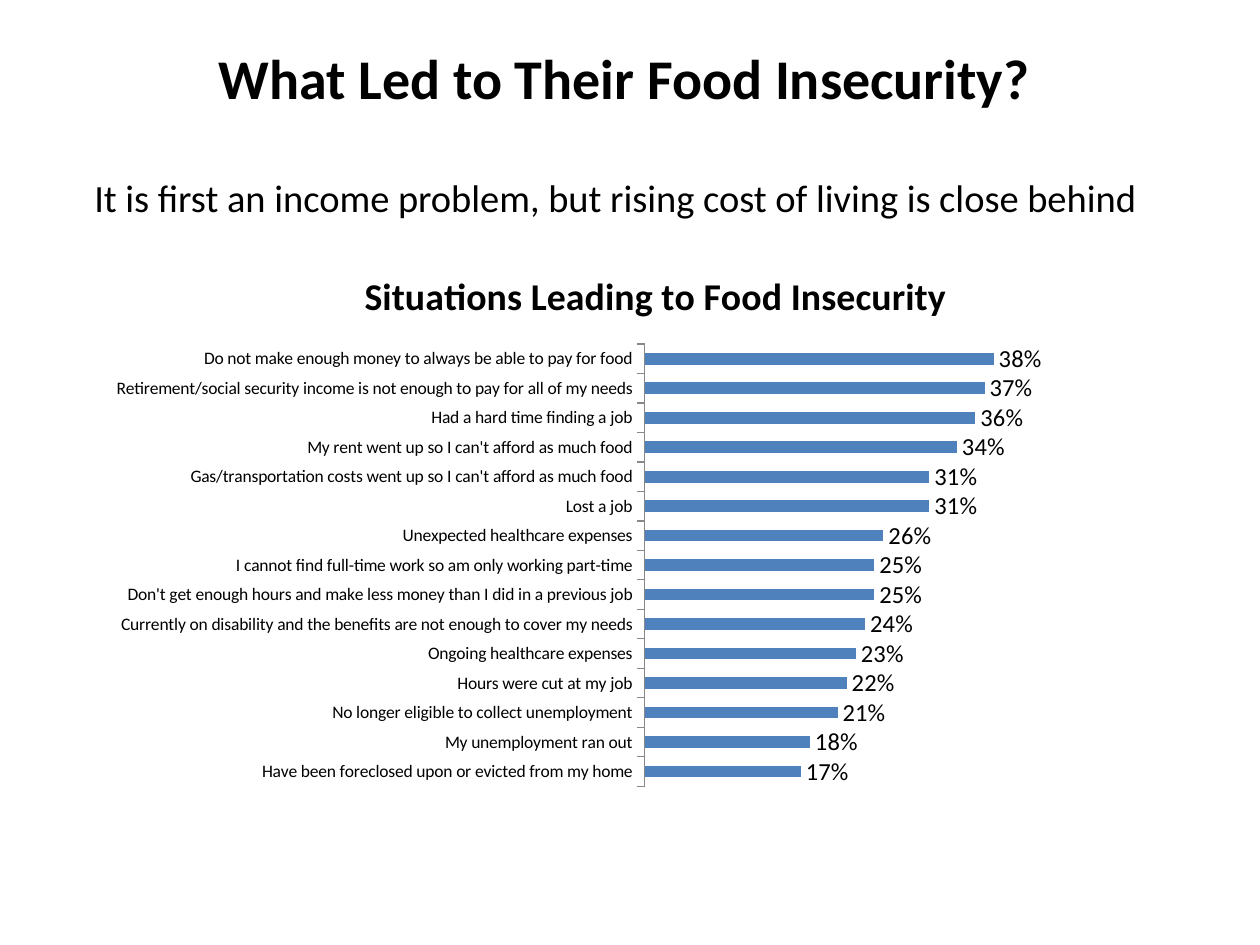
from lxml import etree
from pptx import Presentation
from pptx.chart.data import CategoryChartData
from pptx.dml.color import RGBColor
from pptx.enum import chart as ch, text
from pptx.oxml.ns import qn
from pptx.util import Pt

BLACK = RGBColor(0, 0, 0)
GRAY = RGBColor(0x88, 0x88, 0x88)
BLUE = RGBColor(0x4F, 0x81, 0xBD)

SITUATIONS = [
    ("Do not make enough money to always be able to pay for food", 0.38),
    ("Retirement/social security income is not enough to pay for all of my needs", 0.37),
    ("Had a hard time finding a job", 0.36),
    ("My rent went up so I can't afford as much food", 0.34),
    ("Gas/transportation costs went up so I can't afford as much food", 0.31),
    ("Lost a job", 0.31),
    ("Unexpected healthcare expenses", 0.26),
    ("I cannot find full-time work so am only working part-time", 0.25),
    ("Don't get enough hours and make less money than I did in a previous job", 0.25),
    ("Currently on disability and the benefits are not enough to cover my needs", 0.24),
    ("Ongoing healthcare expenses", 0.23),
    ("Hours were cut at my job", 0.22),
    ("No longer eligible to collect unemployment", 0.21),
    ("My unemployment ran out", 0.18),
    ("Have been foreclosed upon or evicted from my home", 0.17),
]


def set_font(font, size, bold=False):
    values = {"name": "Calibri", "size": Pt(size), "bold": bold}
    for key, value in values.items():
        setattr(font, key, value)
    font.color.rgb = BLACK


def set_text(tf, content, size, bold, anchor):
    values = {"text": content, "word_wrap": True, "vertical_anchor": anchor,
              "auto_size": text.MSO_AUTO_SIZE.NONE}
    for key, value in values.items():
        setattr(tf, key, value)
    p = tf.paragraphs[0]
    p.alignment = text.PP_ALIGN.CENTER
    set_font(p.runs[0].font, size, bold)


prs = Presentation()
prs.slide_width, prs.slide_height = Pt(720), Pt(540)
s = prs.slides.add_slide(prs.slide_layouts[5])

title = s.shapes.title
title_box = {"left": 24, "top": 18, "width": 666, "height": 52}
for key, value in title_box.items():
    setattr(title, key, Pt(value))
set_text(title.text_frame, "What Led to Their Food Insecurity?", 32, True,
         text.MSO_ANCHOR.MIDDLE)

data = CategoryChartData(number_format="0%")
data.categories = [label for label, share in SITUATIONS]
data.add_series("Series 1", [share for label, share in SITUATIONS])
chart = s.shapes.add_chart(ch.XL_CHART_TYPE.BAR_CLUSTERED, Pt(53.3), Pt(139.7),
                           Pt(643), Pt(316), data).chart
set_font(chart.font, 18)
chart.has_legend = False
chart.has_title = True
chart.chart_title.include_in_layout = False
tf = chart.chart_title.text_frame
tf.text = "Situations Leading to Food Insecurity"
set_font(tf.paragraphs[0].runs[0].font, 21.6, True)

cat_axis = chart.category_axis
cat_axis.reverse_order = True
cat_axis.major_tick_mark = ch.XL_TICK_MARK.OUTSIDE
cat_axis.format.line.color.rgb = GRAY
cat_axis.format.line.width = Pt(0.75)
set_font(cat_axis.tick_labels.font, 10)

val_axis = chart.value_axis
val_values = {"minimum_scale": 0, "maximum_scale": 0.6, "visible": False,
              "has_major_gridlines": False}
for key, value in val_values.items():
    setattr(val_axis, key, value)

plot = chart.plots[0]
plot.gap_width = 150
plot.vary_by_categories = False
bars = plot.series[0]
bars.format.fill.solid()
bars.format.fill.fore_color.rgb = BLUE
labels = bars.data_labels
label_values = {"show_value": True, "number_format": "0%",
                "number_format_is_linked": False,
                "position": ch.XL_LABEL_POSITION.OUTSIDE_END}
for key, value in label_values.items():
    setattr(labels, key, value)
set_font(labels.font, 14)

plot_area = chart.element.find(".//" + qn("c:plotArea"))
for old in plot_area.findall(qn("c:layout")):
    plot_area.remove(old)
layout = etree.Element(qn("c:layout"))
plot_area.insert(0, layout)
manual = etree.SubElement(layout, qn("c:manualLayout"))
layout_values = {"layoutTarget": "inner", "xMode": "edge", "yMode": "edge",
                 "x": "0.49", "y": "0.18", "w": "0.49", "h": "0.8"}
for key, value in layout_values.items():
    etree.SubElement(manual, qn("c:" + key)).set("val", value)

tf = s.shapes.add_textbox(Pt(36), Pt(84), Pt(631.5), Pt(45.5)).text_frame
margins = {"margin_left": 3, "margin_right": 3, "margin_top": 3.6, "margin_bottom": 3.6}
for key, value in margins.items():
    setattr(tf, key, Pt(value))
set_text(tf, "It is first an income problem, but rising cost of living is close behind",
         22, False, text.MSO_ANCHOR.BOTTOM)

prs.save("out.pptx")
